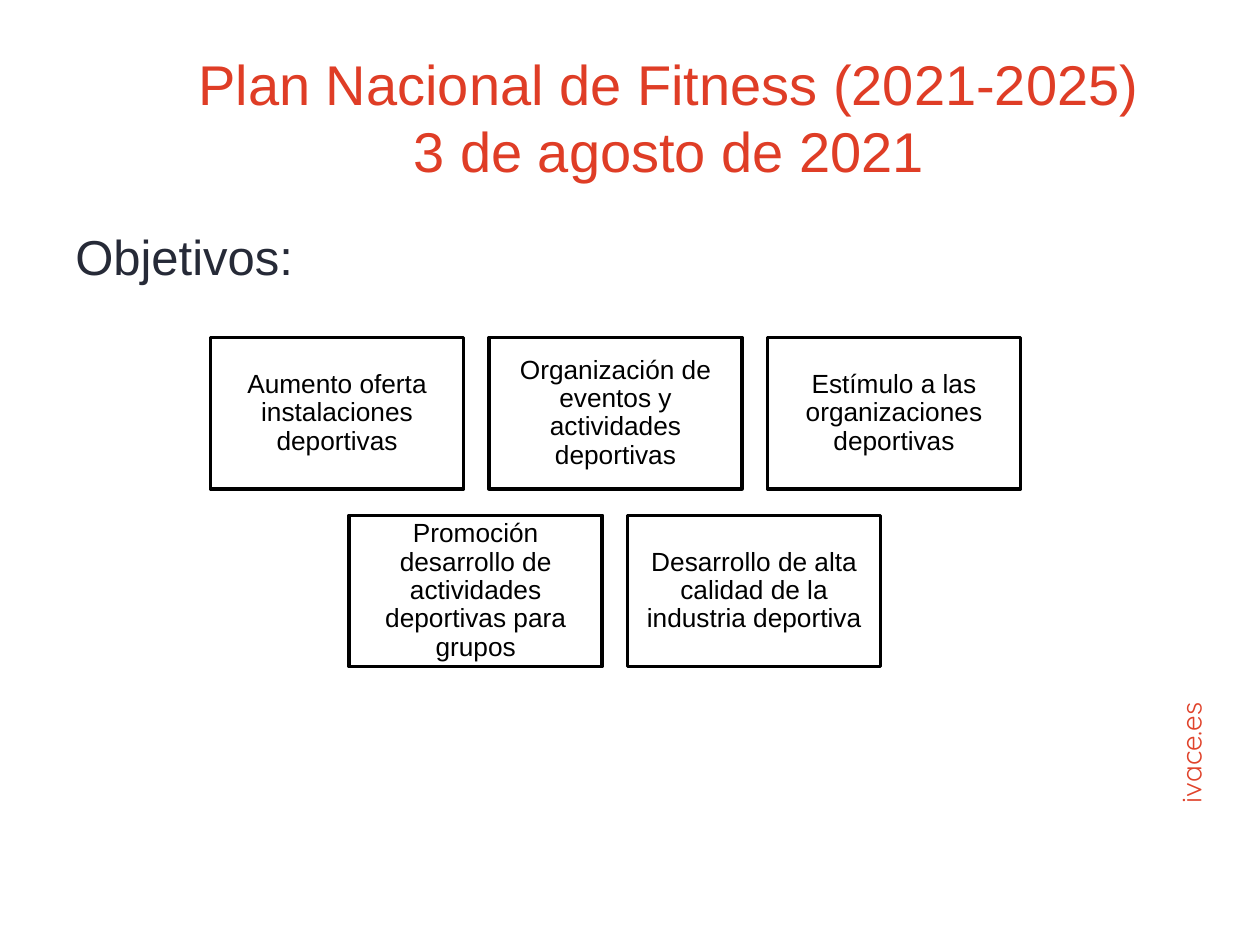
from pptx import Presentation
from pptx.dml.color import RGBColor as RGB
from pptx.enum.shapes import MSO_SHAPE as Shape
from pptx.enum.text import MSO_ANCHOR as Anchor, PP_ALIGN as Align
from pptx.util import Inches, Pt

COLORS = {"title": "DF3D26", "body": "262A37", "site": "E0432B",
          "box": "FFFFFF", "ink": "000000"}
ROWS = [
    (1.67, 2.68, ["Aumento oferta instalaciones deportivas",
                  "Organización de eventos y actividades deportivas",
                  "Estímulo a las organizaciones deportivas"]),
    (2.77, 4.09, ["Promoción desarrollo de actividades deportivas para grupos",
                  "Desarrollo de alta calidad de la industria deportiva"]),
]
WIDTH, HEIGHT, STEP = 2.01, 1.2, 2.21


def color(name):
    """Return the named colour."""
    return RGB.from_string(COLORS[name])


def write(shape, text, size, ink, align=Align.LEFT, anchor=Anchor.TOP, font="Arial"):
    """Fill a shape with one styled paragraph."""
    frame = shape.text_frame
    frame.word_wrap = True
    frame.vertical_anchor = anchor
    frame.text = text
    para = frame.paragraphs[0]
    para.alignment = align
    for run in para.runs:
        run.font.size = Pt(size)
        run.font.name = font
        run.font.color.rgb = color(ink)
    return frame


def add_text(slide, place, *style, **extra):
    """Add a text box and return it."""
    box = slide.shapes.add_textbox(*map(Inches, place))
    write(box, *style, **extra)
    return box


def add_goal(slide, left, top, text):
    """Add an outlined box with one goal."""
    box = slide.shapes.add_shape(
        Shape.RECTANGLE, Inches(left), Inches(top), Inches(WIDTH), Inches(HEIGHT))
    box.shadow.inherit = False
    box.fill.solid()
    box.fill.fore_color.rgb = color("box")
    box.line.color.rgb = color("ink")
    box.line.width = Pt(2)
    frame = write(box, text, 15, "ink", Align.CENTER, Anchor.MIDDLE)
    frame.margin_left = frame.margin_right = Inches(0.06)
    frame.margin_top = frame.margin_bottom = Inches(0.06)
    frame.paragraphs[0].line_spacing = 0.9


def main():
    """Build the slide and save it."""
    deck = Presentation()
    deck.slide_width, deck.slide_height = Inches(10), Inches(7.5)
    slide = deck.slides.add_slide(deck.slide_layouts[6])
    site = add_text(slide, (8.45, 4.91, 2.38, 0.75), "ivace.es", 16, "site",
                    font="Quicksand")
    site.rotation = 270
    add_text(slide, (1.12, 0.3, 8.38, 1.25),
             "Plan Nacional de Fitness (2021-2025)\v3 de agosto de 2021",
             32, "title", Align.CENTER, Anchor.MIDDLE)
    add_text(slide, (0.5, 1.75, 9, 4.95), "Objetivos:", 28, "body")
    for left, top, goals in ROWS:
        for col, goal in enumerate(goals):
            add_goal(slide, left + col * STEP, top, goal)
    deck.save("out.pptx")


if __name__ == "__main__":
    main()
